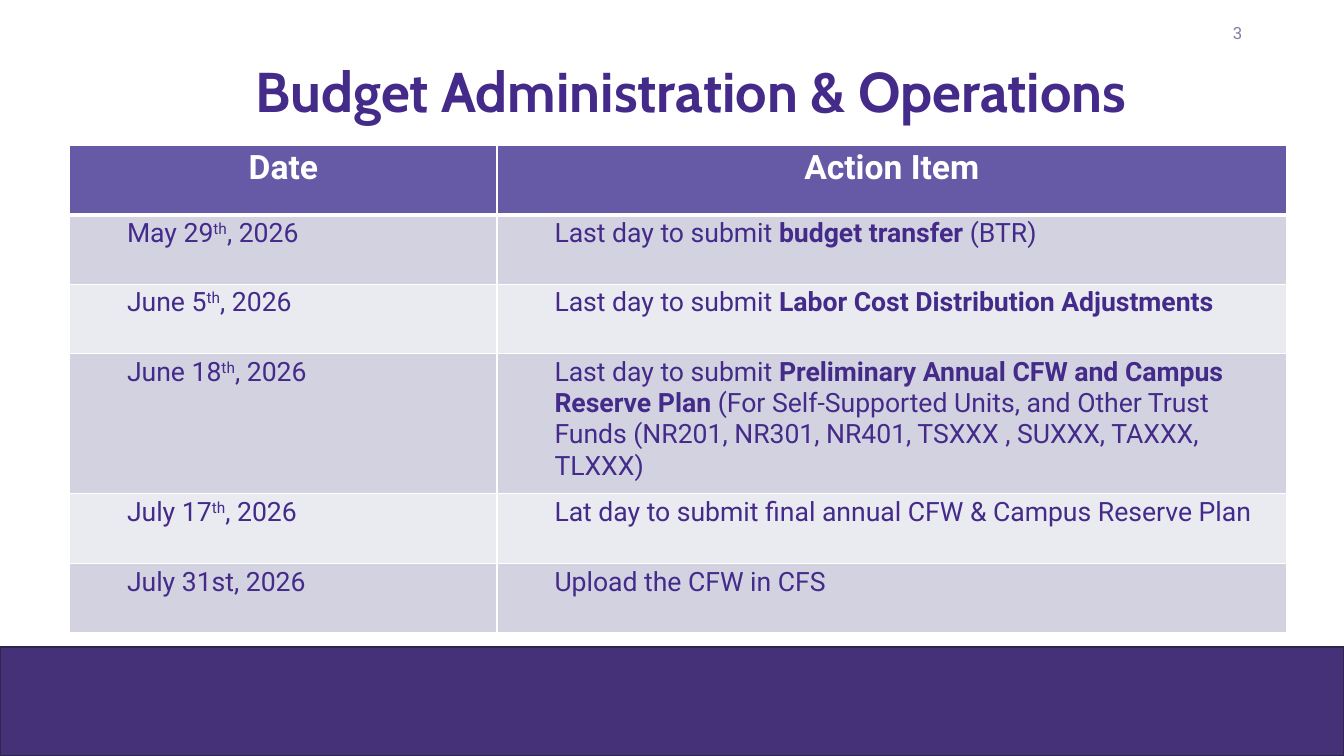
from lxml.etree import SubElement
from pptx import Presentation
from pptx.dml.color import RGBColor
from pptx.enum.shapes import MSO_SHAPE
from pptx.enum.text import MSO_ANCHOR, MSO_AUTO_SIZE, PP_ALIGN
from pptx.oxml.ns import qn
from pptx.util import Inches, Pt

COLORS = {
    "white": "FFFFFF",
    "title": "442B8A",
    "page": "847DA7",
    "band": "443178",
    "band_line": "2D2749",
    "header": "665AA7",
    "odd_row": "D3D2E1",
    "even_row": "EAEAF1",
}
PLAIN, BOLD, SUPER = "plain", "bold", "super"


def ordinal_date(day, suffix):
    return [(day, PLAIN), (suffix, SUPER), (", 2026", PLAIN)]


HEADINGS = ["Date", "Action Item"]
DEADLINES = [
    (ordinal_date("May 29", "th"),
     [("Last day to submit ", PLAIN), ("budget transfer ", BOLD), ("(BTR)", PLAIN)]),
    (ordinal_date("June 5", "th"),
     [("Last day to submit ", PLAIN), ("Labor Cost Distribution Adjustments", BOLD)]),
    (ordinal_date("June 18", "th"),
     [("Last day to submit ", PLAIN),
      ("Preliminary Annual CFW and Campus Reserve Plan ", BOLD),
      ("(For Self-Supported Units, and Other Trust Funds "
       "(NR201, NR301, NR401, TSXXX , SUXXX, TAXXX, TLXXX)", PLAIN)]),
    (ordinal_date("July 17", "th"),
     [("Lat day to submit final annual CFW & Campus Reserve Plan", PLAIN)]),
    ([("July 31st, 2026", PLAIN)], [("Upload the CFW in CFS", PLAIN)]),
]
COLUMN_WIDTHS = [4.24, 7.83]
ROW_HEIGHTS = [0.69, 0.69, 0.69, 1.39, 0.69, 0.69]


def rgb(name):
    return RGBColor.from_string(COLORS[name])


class SlideBuilder:
    body_font = "Roboto"
    title_font = "Cabin"

    def __init__(self, slide):
        self.slide = slide

    def format_run(self, run, size, color, font=None, bold=False):
        run.font.name = font or self.body_font
        run.font.size = Pt(size)
        run.font.bold = bold
        run.font.color.rgb = rgb(color)

    def set_margins(self, target):
        target.margin_left = target.margin_right = Inches(0.07)
        target.margin_top = target.margin_bottom = Inches(0.03)

    def label(self, text, box, align, **style):
        frame = self.slide.shapes.add_textbox(*map(Inches, box)).text_frame
        frame.word_wrap = True
        frame.text = text
        frame.paragraphs[0].alignment = align
        self.format_run(frame.paragraphs[0].runs[0], **style)
        return frame

    def band(self, box, fill, line):
        band = self.slide.shapes.add_shape(MSO_SHAPE.RECTANGLE, *map(Inches, box))
        band.shadow.inherit = False
        band.fill.solid()
        band.fill.fore_color.rgb = rgb(fill)
        band.line.color.rgb = rgb(line)
        band.line.width = Pt(1.5)

    def cell_style(self, cell, fill, bottom=1, top=1):
        """Apply margins, white borders (widths in points) and a fill."""
        self.set_margins(cell)
        properties = cell._tc.get_or_add_tcPr()
        for side, width in zip("LRTB", (1, 1, top, bottom)):
            border = SubElement(properties, qn(f"a:ln{side}"), w=str(Pt(width)))
            paint = SubElement(border, qn("a:solidFill"))
            SubElement(paint, qn("a:srgbClr"), val=COLORS["white"])
        cell.fill.solid()
        cell.fill.fore_color.rgb = rgb(fill)

    def heading_cell(self, cell, text):
        self.cell_style(cell, "header", bottom=3)
        paragraph = cell.text_frame.paragraphs[0]
        paragraph.text = text
        paragraph.alignment = PP_ALIGN.CENTER
        self.format_run(paragraph.runs[0], 24, "white", bold=True)

    def entry_cell(self, cell, pieces, fill, top):
        self.cell_style(cell, fill, top=top)
        paragraph = cell.text_frame.paragraphs[0]
        paragraph.level = 1
        indent = paragraph._p.get_or_add_pPr()
        indent.set("marL", str(Inches(0.5)))
        indent.set("indent", "0")
        for text, kind in pieces:
            run = paragraph.add_run()
            run.text = text
            self.format_run(run, 19, "title", bold=kind == BOLD)
            if kind == SUPER:
                run._r.get_or_add_rPr().set("baseline", "30000")

    def deadline_table(self, left, top):
        table = self.slide.shapes.add_table(
            len(ROW_HEIGHTS), len(COLUMN_WIDTHS), Inches(left), Inches(top),
            Inches(sum(COLUMN_WIDTHS)), Inches(sum(ROW_HEIGHTS))).table
        for column, width in zip(table.columns, COLUMN_WIDTHS):
            column.width = Inches(width)
        for row, height in zip(table.rows, ROW_HEIGHTS):
            row.height = Inches(height)
        for column, heading in enumerate(HEADINGS):
            self.heading_cell(table.cell(0, column), heading)
        for row, entries in enumerate(DEADLINES, start=1):
            fill = "odd_row" if row % 2 else "even_row"
            for column, pieces in enumerate(entries):
                self.entry_cell(table.cell(row, column), pieces, fill,
                                top=3 if row == 1 else 1)


def main():
    deck = Presentation()
    deck.slide_width, deck.slide_height = Inches(13.33), Inches(7.5)
    builder = SlideBuilder(deck.slides.add_slide(deck.slide_layouts[6]))

    page = builder.label("3", (9.42, 0.13, 3, 0.4), PP_ALIGN.RIGHT,
                         size=12, color="page")
    page.vertical_anchor = MSO_ANCHOR.MIDDLE
    builder.band((0, 6.42, 13.33, 1.08), "band", "band_line")
    title = builder.label("Budget Administration & Operations",
                          (1.76, 0.53, 10.19, 0.74), PP_ALIGN.CENTER, size=40,
                          color="title", font=builder.title_font, bold=True)
    builder.set_margins(title)
    title.auto_size = MSO_AUTO_SIZE.SHAPE_TO_FIT_TEXT
    builder.deadline_table(0.69, 1.44)

    deck.save("out.pptx")


if __name__ == "__main__":
    main()
